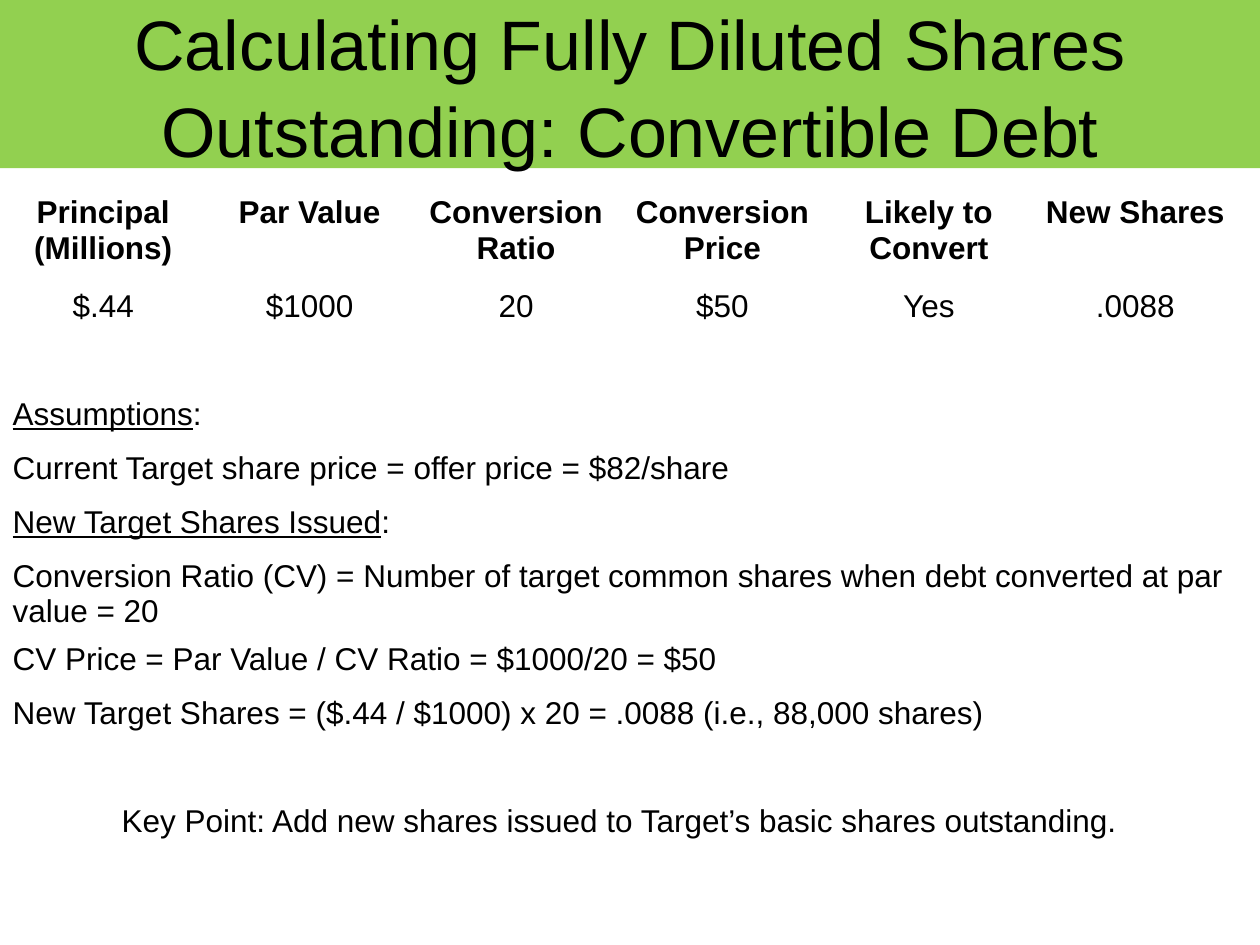
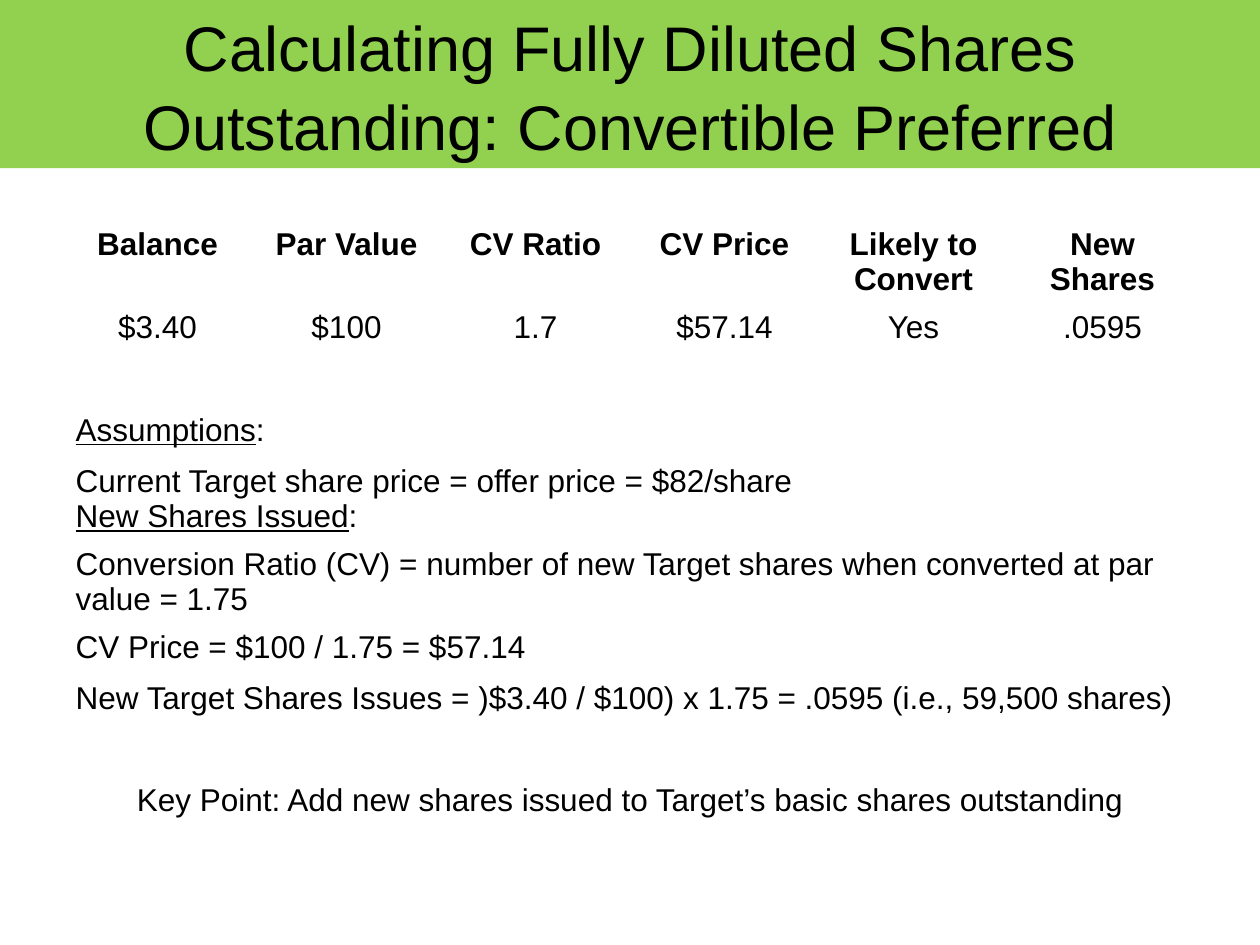
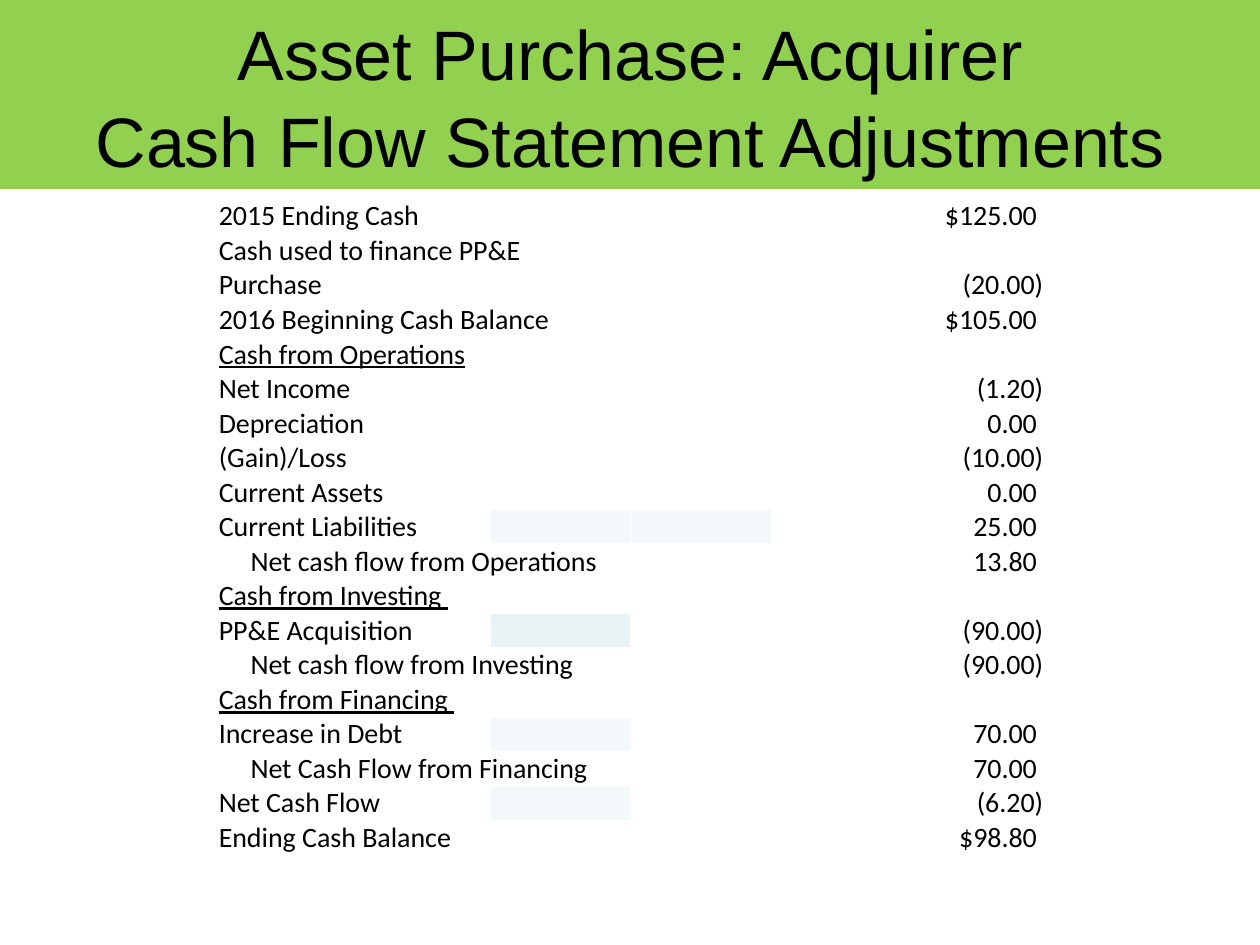
"""Build three slides on diluted shares and acquirer cash flow adjustments."""
from lxml import etree
from pptx import Presentation
from pptx import util as u
from pptx.dml.color import RGBColor
from pptx.enum import text
from pptx.oxml import ns

BAND_GREEN = RGBColor(0x92, 0xD0, 0x50)
BLACK = RGBColor(0, 0, 0)
WHITE = RGBColor(0xFF, 0xFF, 0xFF)
PALE_TEAL = RGBColor(0xF3, 0xF9, 0xFA)
LIGHT_TEAL = RGBColor(0xE7, 0xF3, 0xF4)
LEFT, CENTER, RIGHT = text.PP_ALIGN.LEFT, text.PP_ALIGN.CENTER, text.PP_ALIGN.RIGHT

deck = Presentation()
deck.slide_width, deck.slide_height = u.Cm(25.4), u.Cm(19.05)


def fill_cell(cell, content, size, font, align, header=False, bold=False, shade=WHITE):
    """Write lines with _underlined_ parts, then set the cell's borders and fill."""
    for number, line in enumerate(content.split("\n")):
        frame = cell.text_frame
        paragraph = frame.add_paragraph() if number else frame.paragraphs[0]
        paragraph.alignment = align
        for part, words in enumerate(line.split("_")):
            if words:
                run = paragraph.add_run()
                run.text = words
                run.font.size, run.font.name = u.Pt(size), font
                run.font.bold, run.font.underline = bold, part % 2 == 1
                run.font.color.rgb = BLACK
        if not line:
            paragraph._p.get_or_add_endParaRPr().set("sz", str(size * 100))
    properties = cell._tc.get_or_add_tcPr()
    for position, side in enumerate("LRTB"):
        border = etree.Element(ns.qn(f"a:ln{side}"))
        border.set("w", str(u.Pt(3 if header and side == "B" else 1)))
        paint = etree.SubElement(border, ns.qn("a:solidFill"))
        etree.SubElement(paint, ns.qn("a:srgbClr")).set("val", str(WHITE))
        properties.insert(position, border)
    cell.fill.solid()
    cell.fill.fore_color.rgb = shade


def add_titled_table(title_lines, title_size, band_height, box, row_count, column_count):
    """Add a slide with a green title band and an unstyled table; return the table."""
    slide = deck.slides.add_slide(deck.slide_layouts[5])
    title = slide.shapes.title
    title.left, title.top, title.width, title.height = 0, 0, deck.slide_width, u.Cm(band_height)
    title.fill.solid()
    title.fill.fore_color.rgb = BAND_GREEN
    title.text_frame.auto_size = text.MSO_AUTO_SIZE.NONE
    title.text_frame.word_wrap = True
    title.text_frame.vertical_anchor = text.MSO_ANCHOR.MIDDLE
    heading = title.text_frame.paragraphs[0]
    heading.alignment, heading.line_spacing = CENTER, 1.04
    for number, line in enumerate(title_lines):
        if number:
            heading.add_line_break()
        run = heading.add_run()
        run.text = line
        run.font.size, run.font.name = u.Pt(title_size), "Arial"
        run.font.color.rgb = BLACK
    table = slide.shapes.add_table(row_count, column_count, *[u.Cm(side) for side in box]).table
    table.first_row = table.horz_banding = False
    return table


debt_rows = [
    ["Principal (Millions)", "Par Value", "Conversion Ratio", "Conversion Price",
     "Likely to Convert", "New Shares"],
    ["$.44", "$1000", "20", "$50", "Yes", ".0088"],
    [""] * 6,
    "_Assumptions_:",
    "Current Target share price = offer price = $82/share",
    "_New Target Shares Issued_:",
    "Conversion Ratio (CV) = Number of target common shares when debt converted at par value = 20",
    "CV Price = Par Value / CV Ratio = $1000/20 = $50",
    "New Target Shares = ($.44 / $1000) x 20 = .0088 (i.e., 88,000 shares)",
    "",
    "Key Point: Add new shares issued to Target’s basic shares outstanding.",
    [""] * 6,
    [""] * 6,
]
preferred_rows = [
    ["Balance", "Par Value", "CV Ratio", "CV Price", "Likely to Convert", "New Shares"],
    ["$3.40", "$100", "1.7", "$57.14", "Yes", ".0595"],
    [""] * 6,
    "_Assumptions_:",
    "Current Target share price = offer price = $82/share\n_New Shares Issued_:",
    "Conversion Ratio (CV) = number of new Target shares when converted at par value = 1.75",
    "CV Price = $100 / 1.75 = $57.14",
    "New Target Shares Issues = )$3.40 / $100) x 1.75 = .0595 (i.e., 59,500 shares)",
    "",
    "Key Point: Add new shares issued to Target’s basic shares outstanding",
]
dilution_slides = [
    ("Convertible Debt", 40, (0, 3.81, 24.97, 15.1), 1.88, 1.09, debt_rows),
    ("Convertible Preferred", 36, (1.27, 4.45, 22.86, 10.3), 1.03, 1.03, preferred_rows),
]
for security, title_size, box, header_height, row_height, rows in dilution_slides:
    title_line = f"Calculating Fully Diluted Shares Outstanding: {security}"
    table = add_titled_table([title_line], title_size, 3.39, box, len(rows), 6)
    for r, row in enumerate(rows):
        table.rows[r].height = u.Cm(row_height if r else header_height)
        spanning = isinstance(row, str)
        if spanning:
            table.cell(r, 0).merge(table.cell(r, 5))
            align = CENTER if row.startswith("Key Point") else LEFT
        else:
            align = CENTER
        for c, content in enumerate([row] + [""] * 5 if spanning else row):
            fill_cell(table.cell(r, c), content, 18, "Arial", align, header=r == 0, bold=r == 0)

cash_flow = [
    ("2015 Ending Cash", "$125.00 "),
    ("Cash used to finance PP&E Purchase", "(20.00)"),
    ("2016 Beginning Cash Balance", "$105.00 "),
    ("_Cash from Operations_", ""),
    ("Net Income", "(1.20)"),
    ("Depreciation", "0.00 "),
    ("(Gain)/Loss", "(10.00)"),
    ("Current Assets", "0.00 "),
    ("Current Liabilities", "25.00 "),
    ("Net cash flow from Operations", "13.80 "),
    ("_Cash from Investing _", ""),
    ("PP&E Acquisition", "(90.00)"),
    ("Net cash flow from Investing", "(90.00)"),
    ("_Cash from Financing _", ""),
    ("Increase in Debt", "70.00 "),
    ("Net Cash Flow from Financing", "70.00 "),
    ("Net Cash Flow", "(6.20)"),
    ("Ending Cash Balance", "$98.80 "),
]
wide_labels = {0, 1, 2, 3, 9, 10, 12, 15}
subtotals = {9, 12, 15}
shades = {(8, 2): PALE_TEAL, (8, 3): PALE_TEAL, (11, 2): LIGHT_TEAL,
          (14, 2): PALE_TEAL, (16, 2): PALE_TEAL}
LABEL_COLUMN, AMOUNT_COLUMN = 1, 5
statement = add_titled_table(
    ["Asset Purchase: Acquirer", "Cash Flow Statement Adjustments"], 40, 3.81,
    (1.4, 4.01, 22.63, 13.23), len(cash_flow), 7)
for c, column in enumerate(statement.columns):
    column.width = u.Cm(5.66 if c == LABEL_COLUMN else 2.83)
line_height = u.Cm(13.23) // (len(cash_flow) + 1)
for r, (label, amount) in enumerate(cash_flow):
    statement.rows[r].height = line_height * (2 if r == 1 else 1)
    if r in wide_labels:
        statement.cell(r, LABEL_COLUMN).merge(statement.cell(r, LABEL_COLUMN + 1))
    for c in range(7):
        cell = statement.cell(r, c)
        cell.vertical_anchor = text.MSO_ANCHOR.BOTTOM
        cell.margin_top = cell.margin_bottom = 0
        indented = c == LABEL_COLUMN and r in subtotals
        cell.margin_left, cell.margin_right = u.Cm(0.82 if indented else 0.18), u.Cm(0.18)
        content = {LABEL_COLUMN: label, AMOUNT_COLUMN: amount}.get(c, "")
        fill_cell(cell, content, 16, "Calibri", RIGHT if c == AMOUNT_COLUMN else LEFT,
                  header=r == 0, shade=shades.get((r, c), WHITE))

deck.save("out.pptx")
